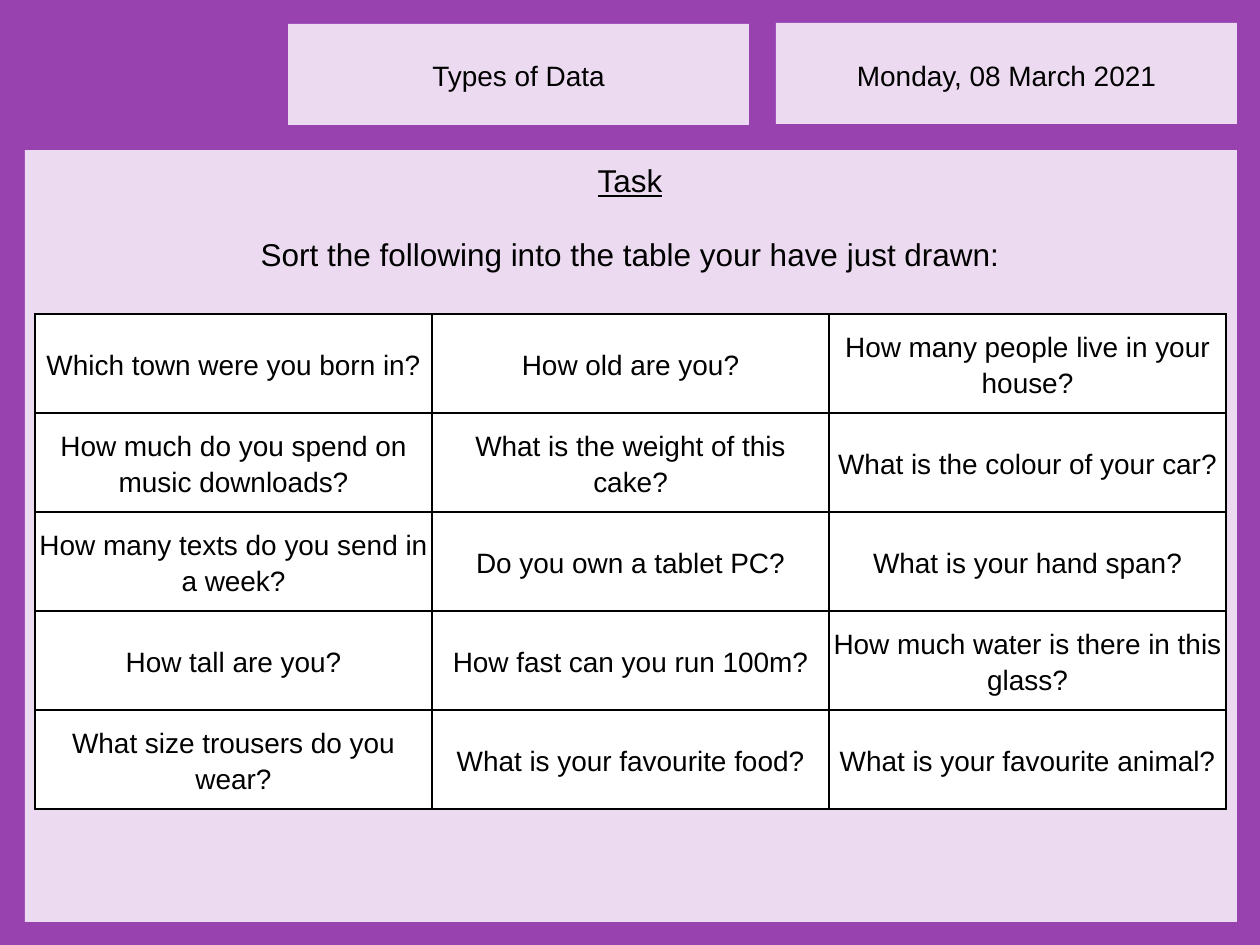
from typing import NamedTuple

from lxml.etree import SubElement
from pptx import Presentation
from pptx.dml.color import RGBColor
from pptx.enum.shapes import MSO_SHAPE as Shape
from pptx.enum.text import MSO_ANCHOR as Anchor, PP_ALIGN as Align
from pptx.oxml.ns import qn
from pptx.util import Emu, Pt

EMU_PER_PX = 914400 / 126
PURPLE, LILAC, WHITE, BLACK = "9842B0", "ECDAF1", "FFFFFF", "000000"
COLUMN_WIDTH, ROW_HEIGHT = 397, 99

QUESTIONS = [
    ["Which town were you born in?", "How old are you?",
     "How many people live in your house?"],
    ["How much do you spend on music downloads?",
     "What is the weight of this cake?", "What is the colour of your car?"],
    ["How many texts do you send in a week?", "Do you own a tablet PC?",
     "What is your hand span?"],
    ["How tall are you?", "How fast can you run 100m?",
     "How much water is there in this glass?"],
    ["What size trousers do you wear?", "What is your favourite food?",
     "What is your favourite animal?"],
]


class Area(NamedTuple):
    left: int
    top: int
    width: int
    height: int


class Panel(NamedTuple):
    area: Area
    color: str


class Label(NamedTuple):
    area: Area
    lines: list[str]
    size: int


PANELS = [
    Panel(Area(0, 0, 1260, 945), PURPLE),
    Panel(Area(776, 23, 461, 101), LILAC),
    Panel(Area(288, 24, 461, 101), LILAC),
    Panel(Area(25, 150, 1212, 772), LILAC),
]
HEADERS = [
    Label(Area(776, 52, 461, 47), ["Monday, 08 March 2021"], 16),
    Label(Area(288, 52, 461, 47), ["Types of Data"], 16),
]
TASK = Label(
    Area(35, 155, 1190, 127),
    ["Task", "Sort the following into the table your have just drawn:"], 18)


def px(length: int) -> Emu:
    return Emu(round(length * EMU_PER_PX))


def place(area: Area) -> list[Emu]:
    return [px(length) for length in area]


def rgb(color: str) -> RGBColor:
    return RGBColor.from_string(color)


def style_paragraph(para, size: int) -> None:
    para.alignment = Align.CENTER
    for span in para.runs:
        span.font.name = "Arial"
        span.font.size = Pt(size)
        span.font.color.rgb = rgb(BLACK)


def draw_panel(page, panel: Panel) -> None:
    shape = page.shapes.add_shape(Shape.RECTANGLE, *place(panel.area))
    shape.shadow.inherit = False
    shape.fill.solid()
    shape.fill.fore_color.rgb = rgb(panel.color)
    shape.line.fill.background()


def draw_label(page, label: Label):
    frame = page.shapes.add_textbox(*place(label.area)).text_frame
    frame.word_wrap = True
    frame.text = "\n".join(label.lines)
    for para in frame.paragraphs:
        style_paragraph(para, label.size)
    return frame


def add_borders(cell) -> None:
    properties = cell._tc.get_or_add_tcPr()
    for position, side in enumerate(("a:lnL", "a:lnR", "a:lnT", "a:lnB")):
        line = properties.makeelement(qn(side), {"w": str(Pt(1))})
        fill = SubElement(line, qn("a:solidFill"))
        SubElement(fill, qn("a:srgbClr"), val=BLACK)
        properties.insert(position, line)


def fill_cell(cell, question: str) -> None:
    cell.fill.solid()
    cell.fill.fore_color.rgb = rgb(WHITE)
    cell.vertical_anchor = Anchor.MIDDLE
    cell.margin_left = cell.margin_right = px(4)
    cell.margin_top = cell.margin_bottom = px(1)
    cell.text = question
    para = cell.text_frame.paragraphs[0]
    para.line_spacing = 1.15
    para.space_after = Pt(10)
    style_paragraph(para, 16)
    add_borders(cell)


def draw_questions(page, left: int, top: int) -> None:
    rows, columns = len(QUESTIONS), len(QUESTIONS[0])
    area = Area(left, top, columns * COLUMN_WIDTH, rows * ROW_HEIGHT)
    table = page.shapes.add_table(rows, columns, *place(area)).table
    table.first_row = table.horz_banding = False
    for column in table.columns:
        column.width = px(COLUMN_WIDTH)
    for row, questions in zip(table.rows, QUESTIONS):
        row.height = px(ROW_HEIGHT)
        for cell, question in zip(row.cells, questions):
            fill_cell(cell, question)


def main() -> None:
    deck = Presentation()
    deck.slide_width, deck.slide_height = px(1260), px(945)
    page = deck.slides.add_slide(deck.slide_layouts[6])
    for panel in PANELS:
        draw_panel(page, panel)
    for header in HEADERS:
        draw_label(page, header)
    draw_questions(page, 35, 314)
    title, instruction = draw_label(page, TASK).paragraphs
    title.runs[0].font.underline = True
    instruction.space_before = Pt(20.7)
    deck.save("out.pptx")


if __name__ == "__main__":
    main()
